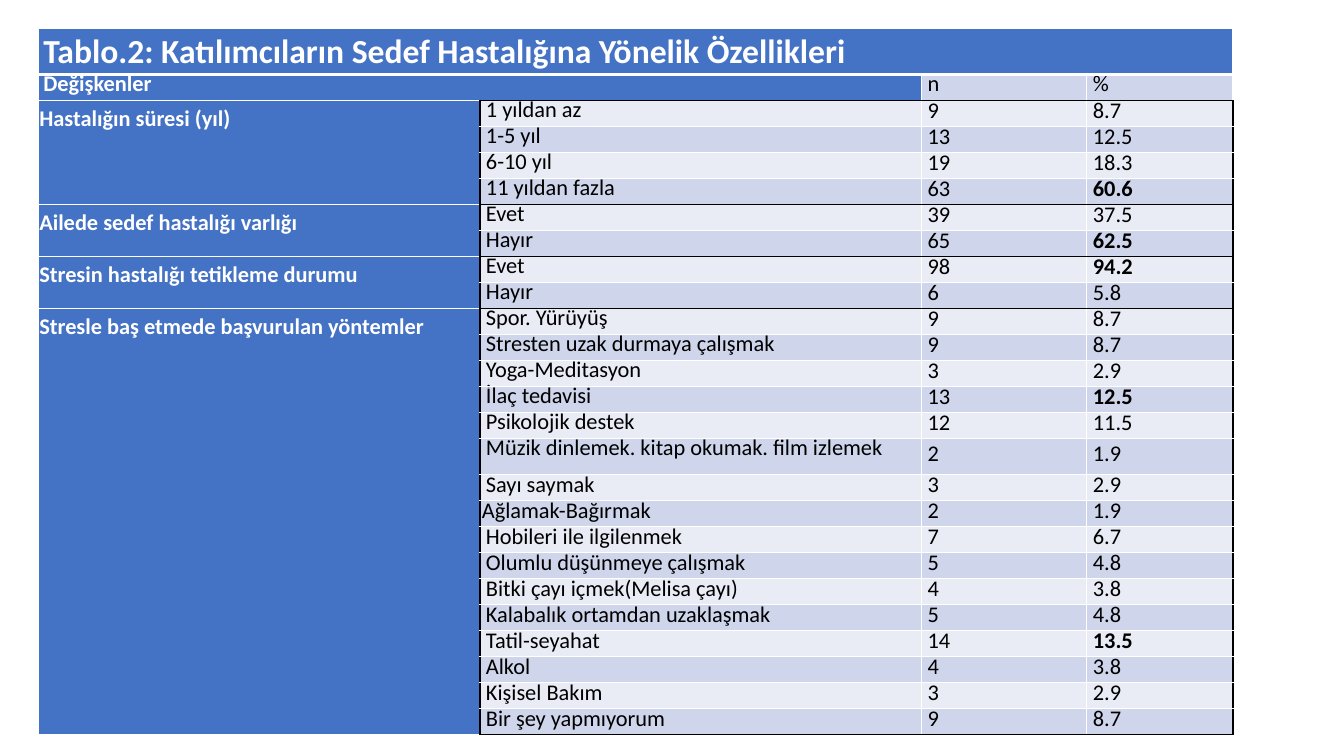
from lxml import etree
from pptx import Presentation
from pptx.dml.color import RGBColor
from pptx.enum.text import MSO_ANCHOR as Anchor
from pptx.oxml.ns import qn
from pptx.util import Inches, Pt

BLUE = RGBColor(0x44, 0x72, 0xC4)
LIGHT = RGBColor(0xE9, 0xEB, 0xF5)
DARKER = RGBColor(0xCF, 0xD5, 0xEA)
WHITE = RGBColor(0xFF, 0xFF, 0xFF)
BLACK = RGBColor(0x00, 0x00, 0x00)

TITLE = "Tablo.2: Katılımcıların Sedef Hastalığına Yönelik Özellikleri"
COLUMN_WIDTHS = (4.38, 4.38, 1.64, 1.45)
TITLE_HEIGHT, TALL_HEIGHT, ROWS_HEIGHT = 0.46, 0.36, 6.19
TALL_LABEL = "Müzik dinlemek. kitap okumak. film izlemek"
UNINDENTED_LABEL = "Ağlamak-Bağırmak"

# Each group: name, percentages in bold, rows of (label, n, %)
GROUPS = (
    ("Hastalığın süresi (yıl)", ("60.6",), (
        ("1 yıldan az", "9", "8.7"),
        ("1-5 yıl", "13", "12.5"),
        ("6-10 yıl", "19", "18.3"),
        ("11 yıldan fazla", "63", "60.6"))),
    ("Ailede sedef hastalığı varlığı", ("62.5",), (
        ("Evet", "39", "37.5"),
        ("Hayır", "65", "62.5"))),
    ("Stresin hastalığı tetikleme durumu", ("94.2",), (
        ("Evet", "98", "94.2"),
        ("Hayır", "6", "5.8"))),
    ("Stresle baş etmede başvurulan yöntemler", ("12.5", "13.5"), (
        ("Spor. Yürüyüş", "9", "8.7"),
        ("Stresten uzak durmaya çalışmak", "9", "8.7"),
        ("Yoga-Meditasyon", "3", "2.9"),
        ("İlaç tedavisi", "13", "12.5"),
        ("Psikolojik destek", "12", "11.5"),
        (TALL_LABEL, "2", "1.9"),
        ("Sayı saymak", "3", "2.9"),
        (UNINDENTED_LABEL, "2", "1.9"),
        ("Hobileri ile ilgilenmek", "7", "6.7"),
        ("Olumlu düşünmeye çalışmak", "5", "4.8"),
        ("Bitki çayı içmek(Melisa çayı)", "4", "3.8"),
        ("Kalabalık ortamdan uzaklaşmak", "5", "4.8"),
        ("Tatil-seyahat", "14", "13.5"),
        ("Alkol", "4", "3.8"),
        ("Kişisel Bakım", "3", "2.9"),
        ("Bir şey yapmıyorum", "9", "8.7"))),
)


class TableSlide:
    """Holds the style and the current slide."""

    font_name = "Calibri"
    text_size = Pt(16)
    indent = Inches(0.04)

    def __init__(self, presentation):
        self.slide = presentation.slides.add_slide(presentation.slide_layouts[6])

    def add_table(self, row_heights):
        frame = self.slide.shapes.add_table(
            len(row_heights), len(COLUMN_WIDTHS), Inches(0.38), Inches(0.28),
            Inches(sum(COLUMN_WIDTHS)), Inches(sum(row_heights)))
        table = frame.table
        table.first_row = table.horz_banding = False
        for column, width in zip(table.columns, COLUMN_WIDTHS):
            column.width = Inches(width)
        for row, height in zip(table.rows, row_heights):
            row.height = Inches(height)
        return table

    def add_text(self, cell, text, color, bold=False, size=None, indented=True,
                 spacing=Pt(16)):
        paragraph = cell.text_frame.paragraphs[0]
        paragraph.line_spacing = spacing
        if indented:
            paragraph._p.get_or_add_pPr().set("marL", str(self.indent))
        run = paragraph.add_run()
        run.text = text
        font = run.font
        font.name, font.size, font.bold = self.font_name, size or self.text_size, bold
        font.color.rgb = color

    def set_borders(self, cell, left=WHITE, right=WHITE, top=WHITE, bottom=WHITE,
                    top_width=1, bottom_width=1):
        properties = cell._tc.get_or_add_tcPr()
        borders = (("a:lnL", left, 1), ("a:lnR", right, 1),
                   ("a:lnT", top, top_width), ("a:lnB", bottom, bottom_width))
        for position, (tag, color, width) in enumerate(borders):
            line = etree.Element(qn(tag), w=str(Pt(width)))
            fill = etree.SubElement(line, qn("a:solidFill"))
            etree.SubElement(fill, qn("a:srgbClr"), val=str(color))
            properties.insert(position, line)

    def style_cell(self, cell, fill, margins=(0.01, 0.01), margin_top=0.01,
                   anchor=Anchor.TOP, **borders):
        cell.fill.solid()
        cell.fill.fore_color.rgb = fill
        cell.margin_left, cell.margin_right = map(Inches, margins)
        cell.margin_top, cell.margin_bottom = Inches(margin_top), Inches(0.01)
        cell.vertical_anchor = anchor
        self.set_borders(cell, **borders)

    def add_heading(self, table):
        title, variables = table.cell(0, 0), table.cell(1, 0)
        title.merge(table.cell(0, 3))
        self.style_cell(title, BLUE, margin_top=0.22, bottom_width=3)
        self.add_text(title, TITLE, WHITE, bold=True, size=Pt(24))
        variables.merge(table.cell(1, 1))
        self.style_cell(variables, BLUE, top_width=3)
        self.add_text(variables, "Değişkenler", WHITE, bold=True)
        for column, text in ((2, "n"), (3, "%")):
            cell = table.cell(1, column)
            self.style_cell(cell, DARKER, margins=(0.02, 0.04),
                            bottom=BLACK, top_width=3)
            self.add_text(cell, text, BLACK)

    def add_group(self, table, first, name, highlights, rows):
        last = first + len(rows) - 1
        name_cell = table.cell(first, 0)
        name_cell.merge(table.cell(last, 0))
        self.style_cell(name_cell, BLUE)
        self.add_text(name_cell, name, WHITE, bold=True, indented=False, spacing=1.15)
        for index, values in enumerate(rows, first):
            for column, text in enumerate(values, 1):
                cell = table.cell(index, column)
                self.style_cell(
                    cell, DARKER if index % 2 else LIGHT, margins=(0.02, 0.04),
                    anchor=Anchor.TOP if column == 1 else Anchor.MIDDLE,
                    left=BLACK if column == 1 else WHITE,
                    right=BLACK if column == 3 else WHITE,
                    top=BLACK if index == first else WHITE,
                    bottom=BLACK if index == last else WHITE)
                self.add_text(cell, text, BLACK,
                              bold=column == 3 and text in highlights,
                              indented=text != UNINDENTED_LABEL)


def main():
    presentation = Presentation()
    presentation.slide_width, presentation.slide_height = Inches(13.33), Inches(7.5)

    # Row heights: the ordinary rows share their space equally
    labels = [label for _, _, rows in GROUPS for label, _, _ in rows]
    row_height = ROWS_HEIGHT / len(labels)
    heights = [TITLE_HEIGHT, row_height]
    heights += [TALL_HEIGHT if label == TALL_LABEL else row_height for label in labels]

    # Table
    table_slide = TableSlide(presentation)
    table = table_slide.add_table(heights)
    table_slide.add_heading(table)
    first = 2
    for name, highlights, rows in GROUPS:
        table_slide.add_group(table, first, name, highlights, rows)
        first += len(rows)

    presentation.save("out.pptx")


if __name__ == "__main__":
    main()
